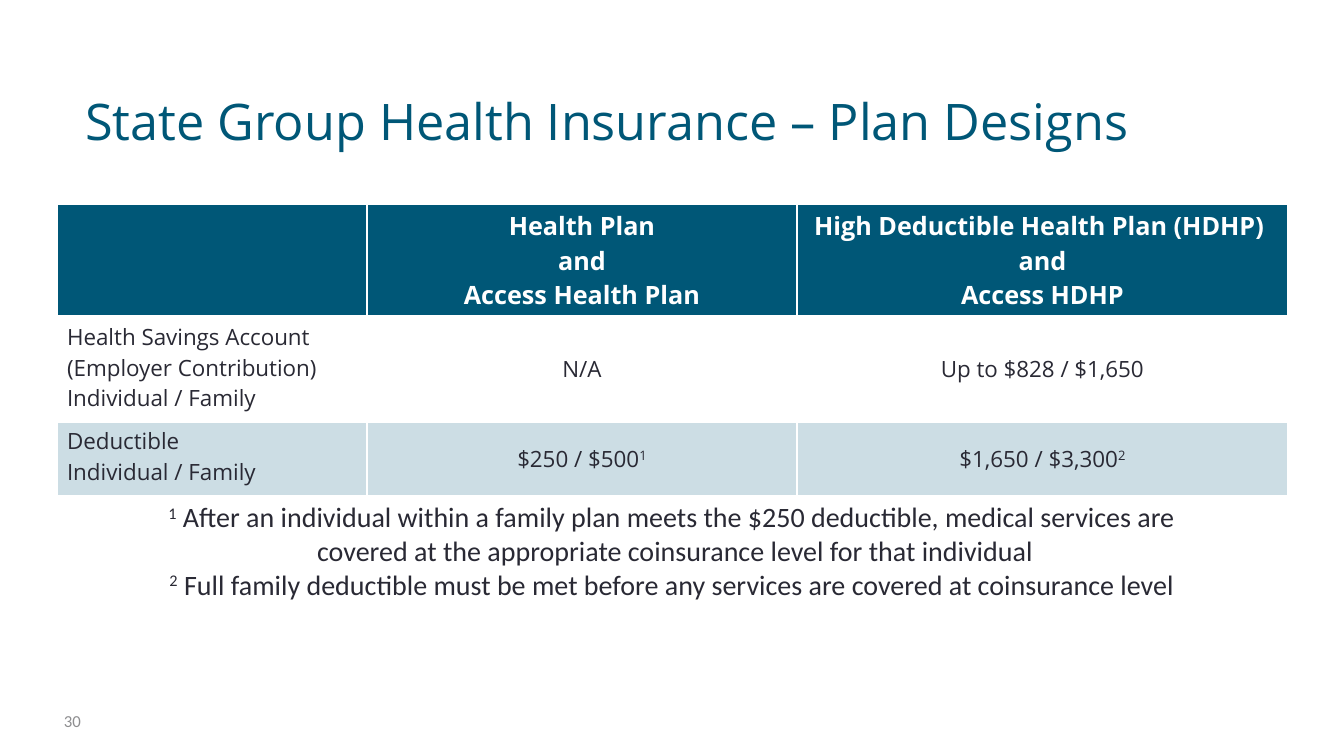
from lxml import etree
from pptx import Presentation
from pptx.dml.color import RGBColor
from pptx.enum.text import MSO_ANCHOR, MSO_AUTO_SIZE, PP_ALIGN
from pptx.oxml.ns import qn
from pptx.util import Inches, Pt

SCALE = Inches(1) / 100.8
TEAL = RGBColor(0x00, 0x57, 0x77)
PALE = RGBColor(0xCC, 0xDD, 0xE4)
WHITE = RGBColor(0xFF, 0xFF, 0xFF)
DARK = RGBColor(0x29, 0x29, 0x34)
GREY = RGBColor(0x8E, 0x8E, 0x90)
SANS, BODY = "Open Sans", "Calibri"
LEFT, MID = PP_ALIGN.LEFT, PP_ALIGN.CENTER

# Each cell is a list of paragraphs; ^ starts a superscript, \n breaks a line
ROWS = [
    [[],
     ["Health Plan", "and", "Access Health Plan"],
     ["High Deductible Health Plan (HDHP) \nand", "Access HDHP"]],
    [["Health Savings Account (Employer Contribution)", "Individual / Family"],
     ["N/A"],
     ["Up to $828 / $1,650"]],
    [["Deductible", "Individual / Family"],
     ["$250 / $500^1"],
     ["$1,650 / $3,300^2"]],
]
NOTES = [
    "^1 After an individual within a family plan meets the $250 deductible, "
    "medical services are",
    " covered at the appropriate coinsurance level for that individual",
    "^2 Full family deductible must be met before any services are covered "
    "at coinsurance level",
]


def px(count):
    return round(count * SCALE)


def add_run(para, text, font, size, color, bold=False, sup=False):
    run = para.add_run()
    run.text = text
    run.font.name, run.font.size, run.font.bold = font, Pt(size), bold
    run.font.color.rgb = color
    if sup:
        run._r.get_or_add_rPr().set("baseline", "30000")


def write(frame, lines, align, *style):
    for i, line in enumerate(lines):
        para = frame.add_paragraph() if i else frame.paragraphs[0]
        para.alignment = align
        for j, part in enumerate(line.split("\n")):
            if j:
                para.add_line_break()
            plain, mark, rest = part.partition("^")
            if plain:
                add_run(para, plain, *style)
            if mark:
                add_run(para, rest[0], *style, sup=True)
                if rest[1:]:
                    add_run(para, rest[1:], *style)


def add_edges(cell, top, bottom):
    props = cell._tc.get_or_add_tcPr()
    for side, width in (("L", 1), ("R", 1), ("T", top), ("B", bottom)):
        line = etree.SubElement(props, qn(f"a:ln{side}"), w=str(Pt(width)))
        fill = etree.SubElement(line, qn("a:solidFill"))
        etree.SubElement(fill, qn("a:srgbClr"), val=str(WHITE))


def add_title(slide, x, y, w, h):
    title = slide.shapes.title
    title.left, title.top, title.width, title.height = map(px, (x, y, w, h))
    frame = title.text_frame
    frame.auto_size = MSO_AUTO_SIZE.NONE
    frame.vertical_anchor = MSO_ANCHOR.BOTTOM
    write(frame, ["State Group Health Insurance – Plan Designs"],
          LEFT, SANS, 36, TEAL)


def add_plans(slide, x, y, widths, heights):
    box = map(px, (x, y, sum(widths), sum(heights)))
    table = slide.shapes.add_table(len(ROWS), len(widths), *box).table
    table.first_row = table.horz_banding = False
    for col, width in zip(table.columns, widths):
        col.width = px(width)
    last = len(ROWS) - 1
    for r, row in enumerate(ROWS):
        table.rows[r].height = px(heights[r])
        style = (SANS, 16, DARK) if r else (SANS, 18, WHITE, True)
        for c, lines in enumerate(row):
            cell = table.cell(r, c)
            add_edges(cell, 3 if r else 1, 3 if r < last else 1)
            cell.fill.solid()
            cell.fill.fore_color.rgb = (TEAL, WHITE, PALE)[r]
            if r and c:
                cell.vertical_anchor = MSO_ANCHOR.MIDDLE
            write(cell.text_frame, lines, MID if c else LEFT, *style)


def add_text(slide, x, y, w, h, lines, align, anchor, *style):
    frame = slide.shapes.add_textbox(*map(px, (x, y, w, h))).text_frame
    frame.word_wrap = True
    frame.vertical_anchor = anchor
    write(frame, lines, align, *style)


def main():
    deck = Presentation()
    deck.slide_width, deck.slide_height = px(1344), px(756)
    slide = deck.slides.add_slide(deck.slide_layouts[5])

    # Title, plan table, footnotes and page number
    add_title(slide, 75, 30, 1204, 126)
    add_plans(slide, 57, 204, (310, 430, 491), (111, 104, 75))
    add_text(slide, 56, 495, 1232, 112, NOTES, MID, MSO_ANCHOR.TOP,
             BODY, 20, DARK)
    add_text(slide, 54, 701, 56, 40, ["30"], LEFT, MSO_ANCHOR.MIDDLE,
             BODY, 12, GREY)
    deck.save("out.pptx")


if __name__ == "__main__":
    main()
